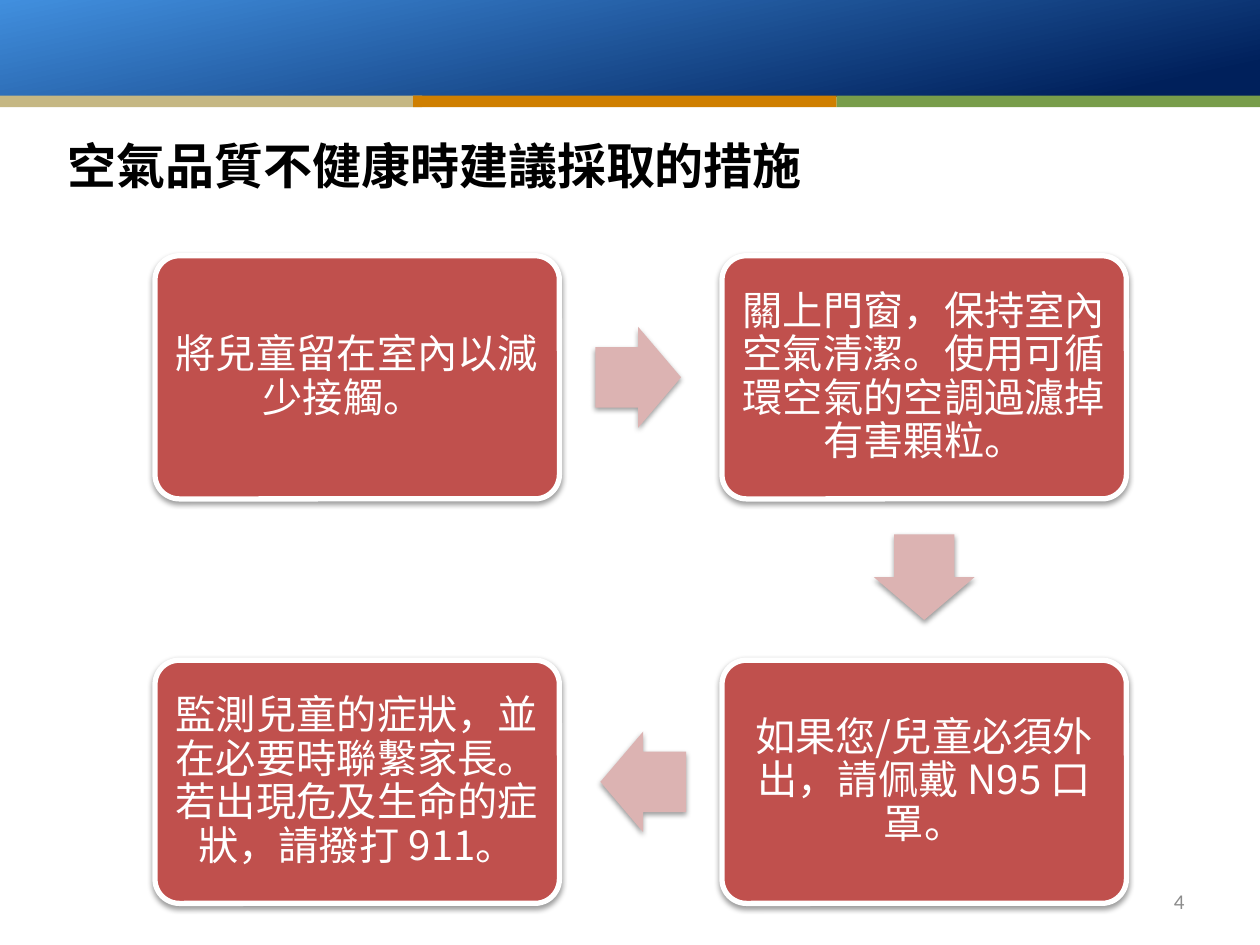
from math import cos, radians, sin

from lxml import etree
from pptx import Presentation
from pptx.dml.color import RGBColor
from pptx.enum.shapes import MSO_SHAPE
from pptx.enum.text import MSO_ANCHOR, PP_ALIGN
from pptx.oxml.ns import qn
from pptx.util import Inches, Pt

RECTANGLE = MSO_SHAPE.RECTANGLE
CARD = MSO_SHAPE.ROUNDED_RECTANGLE
ARROW = MSO_SHAPE.RIGHT_ARROW
MIDDLE, BOTTOM = MSO_ANCHOR.MIDDLE, MSO_ANCHOR.BOTTOM
LEFT, CENTER, RIGHT = PP_ALIGN.LEFT, PP_ALIGN.CENTER, PP_ALIGN.RIGHT

NAVY = RGBColor(0x00, 0x20, 0x5B)
SKY = RGBColor(0x41, 0x8F, 0xDE)
SAND = RGBColor(0xC5, 0xB7, 0x83)
ORANGE = RGBColor(0xCF, 0x7F, 0x00)
GREEN = RGBColor(0x78, 0x9D, 0x4A)
RED = RGBColor(0xC0, 0x50, 0x4D)
PINK = RGBColor(0xDC, 0xB3, 0xB2)
GRAY = RGBColor(0x8C, 0x8C, 0x8C)
BLACK = RGBColor(0x00, 0x00, 0x00)
WHITE = RGBColor(0xFF, 0xFF, 0xFF)
CJK_FONT = "Noto Sans CJK TC"
LATIN_FONT = "Calibri"


def add_block(kind, left, top, width, height, color, shadow=False):
    """Add a filled shape without outline, optionally with a soft shadow below."""
    block = page.shapes.add_shape(
        kind, Inches(left), Inches(top), Inches(width), Inches(height))
    block.shadow.inherit = False
    block.fill.solid()
    block.fill.fore_color.rgb = color
    block.line.fill.background()
    if shadow:
        effects = block._element.spPr.find(qn("a:effectLst"))
        outer = etree.SubElement(
            effects, qn("a:outerShdw"), blurRad=str(Pt(3.1)), dist=str(Pt(1.6)),
            dir="5400000", rotWithShape="0")
        tint = etree.SubElement(outer, qn("a:srgbClr"), val="000000")
        etree.SubElement(tint, qn("a:alpha"), val="38000")
    return block


def write_text(box, text, size, color, font, align, anchor, bold=False):
    frame = box.text_frame
    frame.word_wrap = True
    frame.vertical_anchor = anchor
    para = frame.paragraphs[0]
    para.text = text
    para.alignment = align
    para.font.size = Pt(size)
    para.font.bold = bold
    para.font.color.rgb = color
    para.font.name = font
    properties = para._p.pPr.find(qn("a:defRPr"))
    etree.SubElement(properties, qn("a:ea"), typeface=CJK_FONT)
    return para


deck = Presentation()
deck.slide_width, deck.slide_height = Inches(10), Inches(7.5)
page = deck.slides.add_slide(deck.slide_layouts[6])

# Header band with three stripes below it
header = add_block(RECTANGLE, 0, 0, 10.01, 0.77, NAVY)
header.fill.gradient()
header.fill.gradient_angle = 102
for stop, (position, color) in zip(header.fill.gradient_stops, [(0.09, NAVY), (1, SKY)]):
    stop.position = position
    stop.color.rgb = color
for left, color in [(-0.01, SAND), (3.28, ORANGE), (6.64, GREEN)]:
    add_block(RECTANGLE, left, 0.76, 3.36, 0.09, color)

title = page.shapes.add_textbox(Inches(0.44), Inches(1.15), Inches(8.9), Inches(0.44))
write_text(title, "空氣品質不健康時建議採取的措施", 28, BLACK, CJK_FONT, LEFT, BOTTOM, bold=True)
number = page.shapes.add_textbox(Inches(8.92), Inches(6.95), Inches(0.58), Inches(0.4))
write_text(number, "4", 12, GRAY, LATIN_FONT, RIGHT, MIDDLE)

# Steps run clockwise round a grid of two columns and two rows
GRID_LEFT, GRID_TOP = 1.23, 2.03
COLUMN, ROW = 4.5, 3.21
CARD_WIDTH, CARD_HEIGHT = 3.21, 1.93
ARROW_WIDTH, ARROW_HEIGHT = 0.68, 0.8
ARROW_SETBACK = 0.02

# Column, row, font, text, direction of the arrow to the next step
steps = [
    (0, 0, LATIN_FONT, "將兒童留在室內以減少接觸。\t", 0),
    (1, 0, CJK_FONT, "關上門窗，保持室內空氣清潔。使用可循環空氣的空調過濾掉有害顆粒。", 90),
    (1, 1, CJK_FONT, "如果您/兒童必須外出，請佩戴 N95 口罩。", 180),
    (0, 1, CJK_FONT, "監測兒童的症狀，並在必要時聯繫家長。若出現危及生命的症狀，請撥打 911。", None),
]
for column, row, font, text, turn in steps:
    left, top = GRID_LEFT + column * COLUMN, GRID_TOP + row * ROW
    card = add_block(CARD, left, top, CARD_WIDTH, CARD_HEIGHT, RED, shadow=True)
    card.adjustments[0] = 0.1
    card.line.color.rgb = WHITE
    card.line.width = Pt(3)
    frame = card.text_frame
    frame.margin_left = frame.margin_right = Inches(0.1)
    frame.margin_top = frame.margin_bottom = Inches(0.1)
    para = write_text(card, text, 23, WHITE, font, CENTER, MIDDLE)
    para.line_spacing = 0.9
    if turn is None:
        continue
    across, down = cos(radians(turn)), sin(radians(turn))
    middle_x = left + CARD_WIDTH / 2 + across * (COLUMN / 2 - ARROW_SETBACK)
    middle_y = top + CARD_HEIGHT / 2 + down * (ROW / 2 - ARROW_SETBACK)
    arrow = add_block(ARROW, middle_x - ARROW_WIDTH / 2, middle_y - ARROW_HEIGHT / 2,
                      ARROW_WIDTH, ARROW_HEIGHT, PINK, shadow=True)
    arrow.adjustments[0] = 0.6
    arrow.adjustments[1] = 0.5
    arrow.rotation = turn

deck.save("out.pptx")
